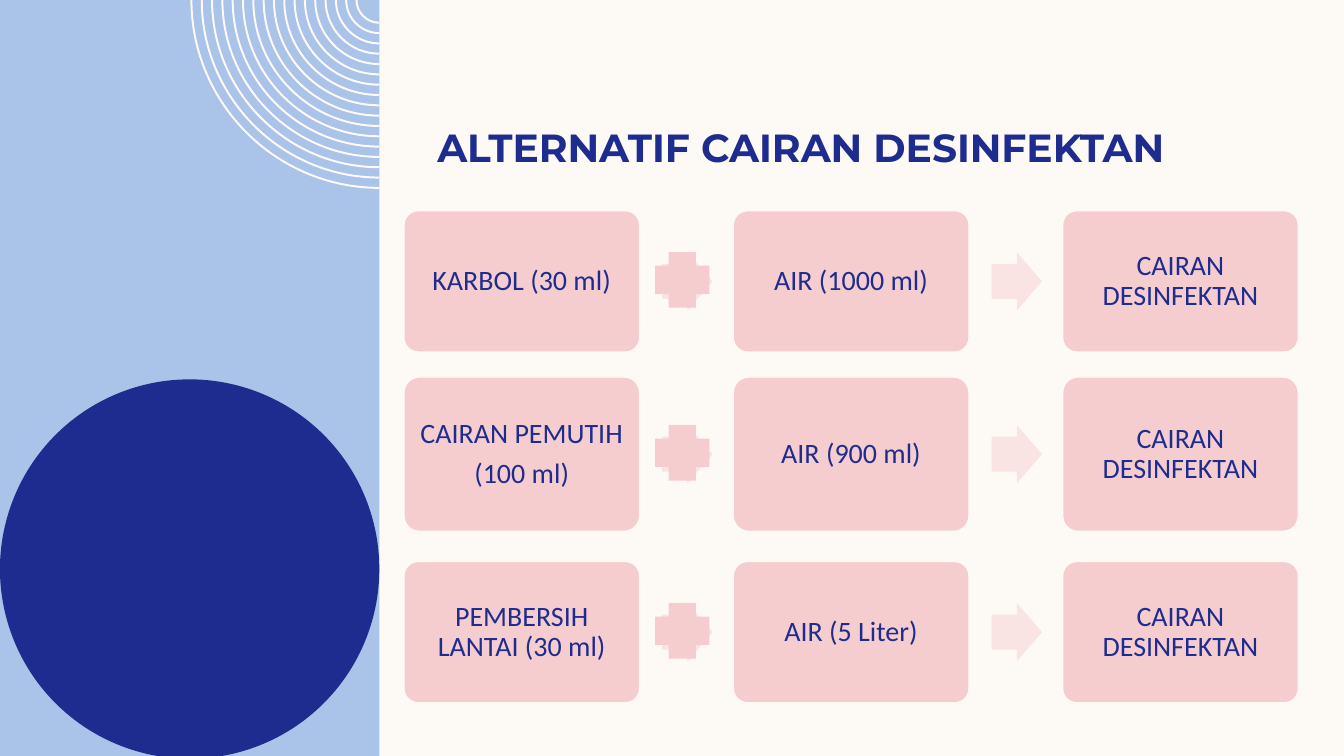
from lxml import etree
from pptx import Presentation
from pptx.dml.color import RGBColor
from pptx.enum.shapes import MSO_SHAPE
from pptx.enum.text import MSO_ANCHOR, MSO_AUTO_SIZE, PP_ALIGN
from pptx.oxml.ns import qn
from pptx.util import Cm, Pt

RECTANGLE, OVAL = MSO_SHAPE.RECTANGLE, MSO_SHAPE.OVAL
BOX, ARROW, PLUS = MSO_SHAPE.ROUNDED_RECTANGLE, MSO_SHAPE.RIGHT_ARROW, MSO_SHAPE.CROSS
LEFT, CENTER = PP_ALIGN.LEFT, PP_ALIGN.CENTER
BOTTOM, MIDDLE = MSO_ANCHOR.BOTTOM, MSO_ANCHOR.MIDDLE

# Content
TITLE = "ALTERNATIF CAIRAN DESINFEKTAN"
RESULT = ["CAIRAN DESINFEKTAN"]
RECIPES = [  # top, height (cm), then the paragraphs of each box
    (5.31, 3.56, [["KARBOL (30 ml)"], ["AIR (1000 ml)"], RESULT]),
    (9.5, 3.89, [["CAIRAN PEMUTIH", "(100 ml)"], ["AIR (900 ml)"], RESULT]),
    (14.15, 3.56, [["PEMBERSIH LANTAI (30 ml)"], ["AIR (5 Liter)"], RESULT]),
]

# Colours
CREAM, SKY, NAVY, PINK, PALE_PINK = "FDFAF6", "AAC3E8", "1F2C8F", "F5CDCE", "F9E3E3"

# Layout in cm
PANEL_WIDTH = 9.56
BOX_LEFT, BOX_WIDTH, BOX_PITCH = 10.18, 5.94, 8.3
ARROW_OFFSET, ARROW_WIDTH, ARROW_HEIGHT = 6.51, 1.27, 1.47
PLUS_OFFSET, PLUS_WIDTH, PLUS_HEIGHT = 6.33, 1.37, 1.4
RING_COUNT, RING_FIRST, RING_STEP, RING_THICKNESS = 17, 0.6, 0.26, 0.05
CURVE = 0.55  # handle length of a quarter circle, as a share of its radius


def color(hex_string):
    return RGBColor.from_string(hex_string)


def paint(shape, fill, line=None):
    shape.shadow.inherit = False
    shape.fill.solid()
    shape.fill.fore_color.rgb = color(fill)
    if line:
        shape.line.color.rgb = color(line)
        shape.line.width = Pt(1)
    else:
        shape.line.fill.background()


def add_shape(kind, left, top, width, height, fill, line=None, adjustments=()):
    shape = slide.shapes.add_shape(kind, Cm(left), Cm(top), Cm(width), Cm(height))
    paint(shape, fill, line)
    for index, value in enumerate(adjustments):
        shape.adjustments[index] = value
    return shape


def write(shape, lines, font, size, bold=False, align=CENTER, anchor=MIDDLE,
          side=0.2, edge=0.2, spacing=1.0):
    frame = shape.text_frame
    frame.word_wrap = True
    frame.auto_size = MSO_AUTO_SIZE.NONE
    frame.vertical_anchor = anchor
    frame.margin_left = frame.margin_right = Cm(side)
    frame.margin_top = frame.margin_bottom = Cm(edge)
    for index, line in enumerate(lines):
        paragraph = frame.add_paragraph() if index else frame.paragraphs[0]
        paragraph.alignment = align
        paragraph.line_spacing = spacing
        paragraph.space_before = Pt(7 if index else 0)
        run = paragraph.add_run()
        run.text = line
        run.font.name, run.font.size, run.font.bold = font, Pt(size), bold
        run.font.color.rgb = color(NAVY)


def quarter_arc(radius):
    """Start, two curve handles and end, from the top edge to the panel's right edge."""
    reach = radius * CURVE
    return [(Cm(PANEL_WIDTH - across), Cm(down)) for across, down in
            ((radius, 0), (radius, reach), (reach, radius), (0, radius))]


def bend(segments):
    """Turn three straight segments into one cubic curve."""
    curve = etree.Element(qn("a:cubicBezTo"))
    segments[0].addprevious(curve)
    for segment in segments:
        curve.append(segment[0])
        segment.getparent().remove(segment)


def add_rings():
    builder = None
    for index in range(RING_COUNT):
        radius = RING_FIRST + index * RING_STEP
        outline = quarter_arc(radius) + quarter_arc(radius - RING_THICKNESS)[::-1]
        if builder is None:
            builder = slide.shapes.build_freeform(*outline[0])
        else:
            builder.move_to(*outline[0])
        builder.add_line_segments(outline[1:], close=True)
    rings = builder.convert_to_shape()
    paint(rings, CREAM)
    # Each ring has seven segments: outer arc, straight end, inner arc
    segments = list(rings.element.iter(qn("a:lnTo")))
    for first in range(0, len(segments), 7):
        bend(segments[first:first + 3])
        bend(segments[first + 4:first + 7])


presentation = Presentation()
presentation.slide_width, presentation.slide_height = Cm(33.87), Cm(19.05)
slide = presentation.slides.add_slide(presentation.slide_layouts[5])
slide.background.fill.solid()
slide.background.fill.fore_color.rgb = color(CREAM)

# Side panel with rings and circle
add_shape(RECTANGLE, 0, 0, PANEL_WIDTH, 19.05, SKY)
add_rings()
add_shape(OVAL, 0, 9.56, PANEL_WIDTH, PANEL_WIDTH, NAVY)

# Title
title = slide.shapes.title
title.left, title.top, title.width, title.height = Cm(10.77), Cm(0.86), Cm(20.93), Cm(3.43)
write(title, [TITLE], "Montserrat", 28, bold=True, align=LEFT, anchor=BOTTOM,
      side=0.25, edge=0)

# Recipe rows: box, arrow, box, arrow, box, with a plus over the first arrow
for top, height, boxes in RECIPES:
    symbol_top = top + (height - ARROW_HEIGHT) / 2
    for column, lines in enumerate(boxes):
        left = BOX_LEFT + column * BOX_PITCH
        box = add_shape(BOX, left, top, BOX_WIDTH, height, PINK, CREAM, [0.1])
        write(box, lines, "Calibri", 20, spacing=0.9)
        if column < len(boxes) - 1:
            add_shape(ARROW, left + ARROW_OFFSET, symbol_top, ARROW_WIDTH, ARROW_HEIGHT,
                      PALE_PINK, adjustments=[0.6, 0.5])
    add_shape(PLUS, BOX_LEFT + PLUS_OFFSET, symbol_top, PLUS_WIDTH, PLUS_HEIGHT, PINK)

presentation.save("out.pptx")
